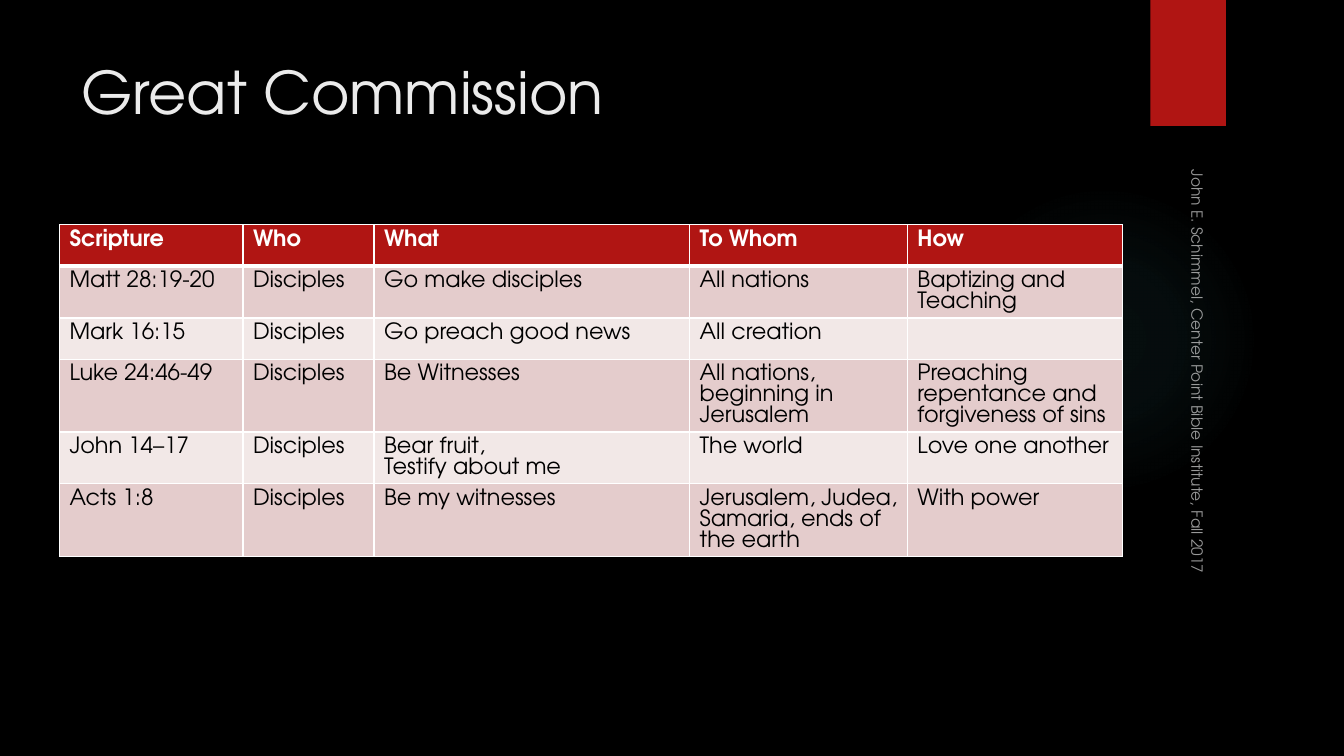
"""Builds the Great Commission slide with its table of scriptures."""
from lxml.etree import SubElement
from pptx import Presentation
from pptx.dml.color import RGBColor
from pptx.enum.shapes import MSO_SHAPE
from pptx.enum.text import MSO_ANCHOR
from pptx.oxml import parse_xml
from pptx.oxml.ns import nsdecls, qn
from pptx.util import Inches, Pt

FONT = "TeX Gyre Adventor"
COLORS = {
    "black": "000000",
    "white": "FFFFFF",
    "title": "EBEBEB",
    "red": "B01513",
    "dark band": "E4CCCC",
    "light band": "F2E8E7",
    "glow": "50B9C1",
}
GLOW_STOPS = [(0, 7), (36, 6), (69, 0)]
COLUMN_WIDTHS = [1.82, 1.3, 3.13, 2.16, 2.13]
ROW_HEIGHT = 0.41
ROWS = [
    ["Scripture", "Who", "What", "To Whom", "How"],
    ["Matt 28:19-20", "Disciples", "Go make disciples", "All nations", "Baptizing and Teaching"],
    ["Mark 16:15", "Disciples", "Go preach good news", "All creation", ""],
    ["Luke 24:46-49", "Disciples", "Be Witnesses", "All nations, beginning in Jerusalem",
     "Preaching repentance and forgiveness of sins"],
    ["John 14–17", "Disciples", "Bear fruit,\nTestify about me", "The world", "Love one another"],
    ["Acts 1:8", "Disciples", "Be my witnesses", "Jerusalem, Judea, Samaria, ends of the earth",
     "With power"],
]


def add_span(para, text, size, color, bold=False):
    span = para.add_run()
    span.text = text
    span.font.name = FONT
    span.font.size = Pt(size)
    span.font.bold = bold
    span.font.color.rgb = RGBColor.from_string(COLORS[color])
    return span


def add_border(cell, side, width):
    line = SubElement(cell._tc.get_or_add_tcPr(), qn(f"a:ln{side}"), w=str(Pt(width)))
    fill = SubElement(line, qn("a:solidFill"))
    SubElement(fill, qn("a:srgbClr"), val=COLORS["white"])


deck = Presentation()
deck.slide_width = Inches(13.33)
deck.slide_height = Inches(7.5)
page = deck.slides.add_slide(deck.slide_layouts[6])
page.background.fill.solid()
page.background.fill.fore_color.rgb = RGBColor.from_string(COLORS["black"])

glow = page.shapes.add_shape(MSO_SHAPE.OVAL, Inches(9.41), Inches(1.83), Inches(3.08), Inches(3.08))
glow.shadow.inherit = False
glow.line.fill.background()
stops = "".join(
    f'<a:gs pos="{position * 1000}"><a:srgbClr val="{COLORS["glow"]}">'
    f'<a:alpha val="{alpha * 1000}"/></a:srgbClr></a:gs>'
    for position, alpha in GLOW_STOPS
)
glow_fill = parse_xml(
    f'<a:gradFill {nsdecls("a")} rotWithShape="1"><a:gsLst>{stops}</a:gsLst><a:path path="circle">'
    '<a:fillToRect l="50000" t="50000" r="50000" b="50000"/></a:path></a:gradFill>'
)
glow._element.spPr.find(qn("a:prstGeom")).addnext(glow_fill)

tab = page.shapes.add_shape(MSO_SHAPE.RECTANGLE, Inches(11.41), 0, Inches(0.75), Inches(1.25))
tab.shadow.inherit = False
tab.line.fill.background()
tab.fill.solid()
tab.fill.fore_color.rgb = RGBColor.from_string(COLORS["red"])

title = page.shapes.add_textbox(Inches(0.71), Inches(0.5), Inches(10.29), Inches(1.53))
title.text_frame.word_wrap = True
add_span(title.text_frame.paragraphs[0], "Great Commission", 42, "title")

table = page.shapes.add_table(
    len(ROWS), len(COLUMN_WIDTHS), Inches(0.59), Inches(2.23),
    Inches(sum(COLUMN_WIDTHS)), Inches(ROW_HEIGHT * len(ROWS)),
).table
table.horz_banding = False
for column, width in zip(table.columns, COLUMN_WIDTHS):
    column.width = Inches(width)
for row_index, texts in enumerate(ROWS):
    table.rows[row_index].height = Inches(ROW_HEIGHT)
    header = row_index == 0
    band = "red" if header else "dark band" if row_index % 2 else "light band"
    for column_index, text in enumerate(texts):
        cell = table.cell(row_index, column_index)
        for side in "LRTB":
            thick = (row_index, side) in [(0, "B"), (1, "T")]
            add_border(cell, side, 3 if thick else 1)
        cell.fill.solid()
        cell.fill.fore_color.rgb = RGBColor.from_string(COLORS[band])
        for line_index, line_text in enumerate(text.split("\n")):
            para = cell.text_frame.add_paragraph() if line_index else cell.text_frame.paragraphs[0]
            para.line_spacing = Pt(14.9)
            if line_text:
                add_span(para, line_text, 16, "white" if header else "black", header)

footer = page.shapes.add_textbox(Inches(9.79), Inches(3.53), Inches(4.22), Inches(0.33))
footer.rotation = 90
footer.text_frame.word_wrap = True
footer.text_frame.vertical_anchor = MSO_ANCHOR.BOTTOM
credit = add_span(footer.text_frame.paragraphs[0],
                  "John E. Schimmel, Center Point Bible Institute, Fall 2017", 11, "white")
SubElement(credit._r.find(".//" + qn("a:srgbClr")), qn("a:alpha"), val="60000")

deck.save("out.pptx")
